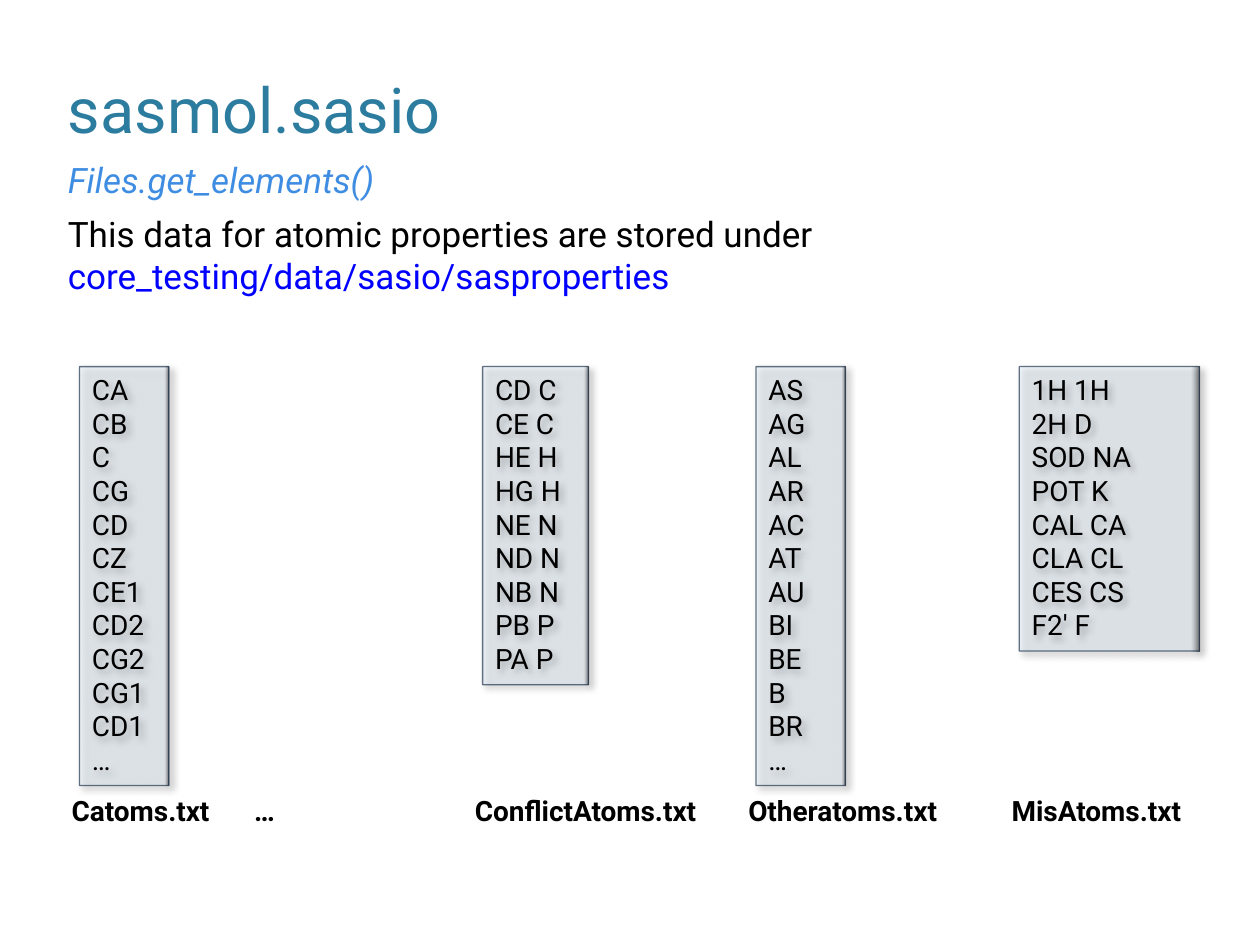
from dataclasses import dataclass

from lxml import etree
from pptx import Presentation
from pptx.dml.color import RGBColor
from pptx.enum.shapes import MSO_SHAPE
from pptx.enum.text import MSO_ANCHOR, PP_ALIGN
from pptx.oxml.ns import qn
from pptx.util import Pt

RECTANGLE = MSO_SHAPE.RECTANGLE
TOP, BOTTOM = MSO_ANCHOR.TOP, MSO_ANCHOR.BOTTOM
LEFT = PP_ALIGN.LEFT
FONT = "Roboto"
BLACK = "000000"
LISTING_TOP, LABEL_TOP = 209.5, 450
LINE_HEIGHT, LISTING_PADDING = 19.2, 9
LABEL_OUTDENT = 11.5


@dataclass
class AtomFile:
    """A data file with its entries and its place on the slide."""

    name: str
    left: float
    width: float
    label_width: float
    entries: list[str]


ATOM_FILES = [
    AtomFile("Catoms.txt", 45.4, 51.1, 126,
             ["CA", "CB", "C", "CG", "CD", "CZ", "CE1", "CD2", "CG2", "CG1", "CD1", "…"]),
    AtomFile("ConflictAtoms.txt", 275.8, 60.5, 168,
             ["CD C", "CE C", "HE H", "HG H", "NE N", "ND N", "NB N", "PB P", "PA P"]),
    AtomFile("Otheratoms.txt", 432, 51.1, 137.5,
             ["AS", "AG", "AL", "AR", "AC", "AT", "AU", "BI", "BE", "B", "BR", "…"]),
    AtomFile("MisAtoms.txt", 582.5, 103, 137.5,
             ["1H 1H", "2H D", "SOD NA", "POT K", "CAL CA", "CLA CL", "CES CS", "F2' F"]),
]


def rgb(value: str) -> RGBColor:
    """Turn a hex string into a colour."""
    return RGBColor.from_string(value)


def write(shape, paragraphs: list[list[tuple[str, str]]], *, size: float = 16,
          bold: bool = False, italic: bool = False, anchor=TOP) -> None:
    """Fill a shape with paragraphs of (text, colour) runs."""
    frame = shape.text_frame
    frame.word_wrap = True
    frame.vertical_anchor = anchor
    for index, runs in enumerate(paragraphs):
        paragraph = frame.paragraphs[0] if index == 0 else frame.add_paragraph()
        paragraph.alignment = LEFT
        for text, colour in runs:
            run = paragraph.add_run()
            run.text = text
            run.font.name = FONT
            run.font.size = Pt(size)
            run.font.bold = bold
            run.font.italic = italic
            run.font.color.rgb = rgb(colour)


def add_text(slide, left: float, top: float, width: float, height: float,
             *runs: tuple[str, str], **text_format) -> None:
    """Add a text box with one paragraph."""
    box = slide.shapes.add_textbox(Pt(left), Pt(top), Pt(width), Pt(height))
    write(box, [list(runs)], **text_format)


def add_alpha(colour_element, percent: int) -> None:
    """Set the opacity of a colour element."""
    etree.SubElement(colour_element, qn("a:alpha")).set("val", str(percent * 1000))


def add_shadow(shape) -> None:
    """Give a shape a soft shadow towards the lower right."""
    effects = etree.SubElement(shape.element.spPr, qn("a:effectLst"))
    shadow = etree.SubElement(effects, qn("a:outerShdw"), blurRad=str(Pt(4)),
                              dist=str(Pt(3)), dir="2700000", algn="tl", rotWithShape="0")
    add_alpha(etree.SubElement(shadow, qn("a:srgbClr"), val=BLACK), 43)


def add_listing(slide, atom_file: AtomFile) -> None:
    """Add the panel of entries of one file."""
    height = LINE_HEIGHT * len(atom_file.entries) + LISTING_PADDING
    panel = slide.shapes.add_shape(RECTANGLE, Pt(atom_file.left), Pt(LISTING_TOP),
                                   Pt(atom_file.width), Pt(height))
    panel.fill.gradient()
    panel.fill.gradient_angle = 0
    for stop, position, colour in zip(panel.fill.gradient_stops, (0.95, 1), ("D9E8F9", BLACK)):
        stop.position = position
        stop.color.rgb = rgb(colour)
    panel.line.color.rgb = rgb("09213B")
    panel.line.width = Pt(0.75)
    for colour_element, percent in zip(panel.element.spPr.iter(qn("a:srgbClr")), (30, 57, 62)):
        add_alpha(colour_element, percent)
    add_shadow(panel)
    write(panel, [[(entry, BLACK)] for entry in atom_file.entries])


def main() -> None:
    """Build the slide and save it."""
    presentation = Presentation()
    presentation.slide_width, presentation.slide_height = Pt(720), Pt(540)
    slide = presentation.slides.add_slide(presentation.slide_layouts[6])
    add_text(slide, 31.7, 23.8, 633.6, 63.4, ("sasmol.sasio", "2C7C9F"), size=36, anchor=BOTTOM)
    add_text(slide, 31.7, 87.1, 545, 31.5, ("Files.get_elements()", "3F8DE2"),
             size=20, italic=True)
    add_text(slide, 31.7, 118.1, 532, 80,
             ("This data for atomic properties are stored under ", BLACK),
             ("core_testing/data/sasio/sasproperties", "0000FF"), size=20)
    for atom_file in ATOM_FILES:
        add_listing(slide, atom_file)
        add_text(slide, atom_file.left - LABEL_OUTDENT, LABEL_TOP, atom_file.label_width, 26.6,
                 (atom_file.name, BLACK), bold=True)
    add_text(slide, 138.2, LABEL_TOP, 126, 26.6, ("…", BLACK), bold=True)
    presentation.save("out.pptx")


if __name__ == "__main__":
    main()
